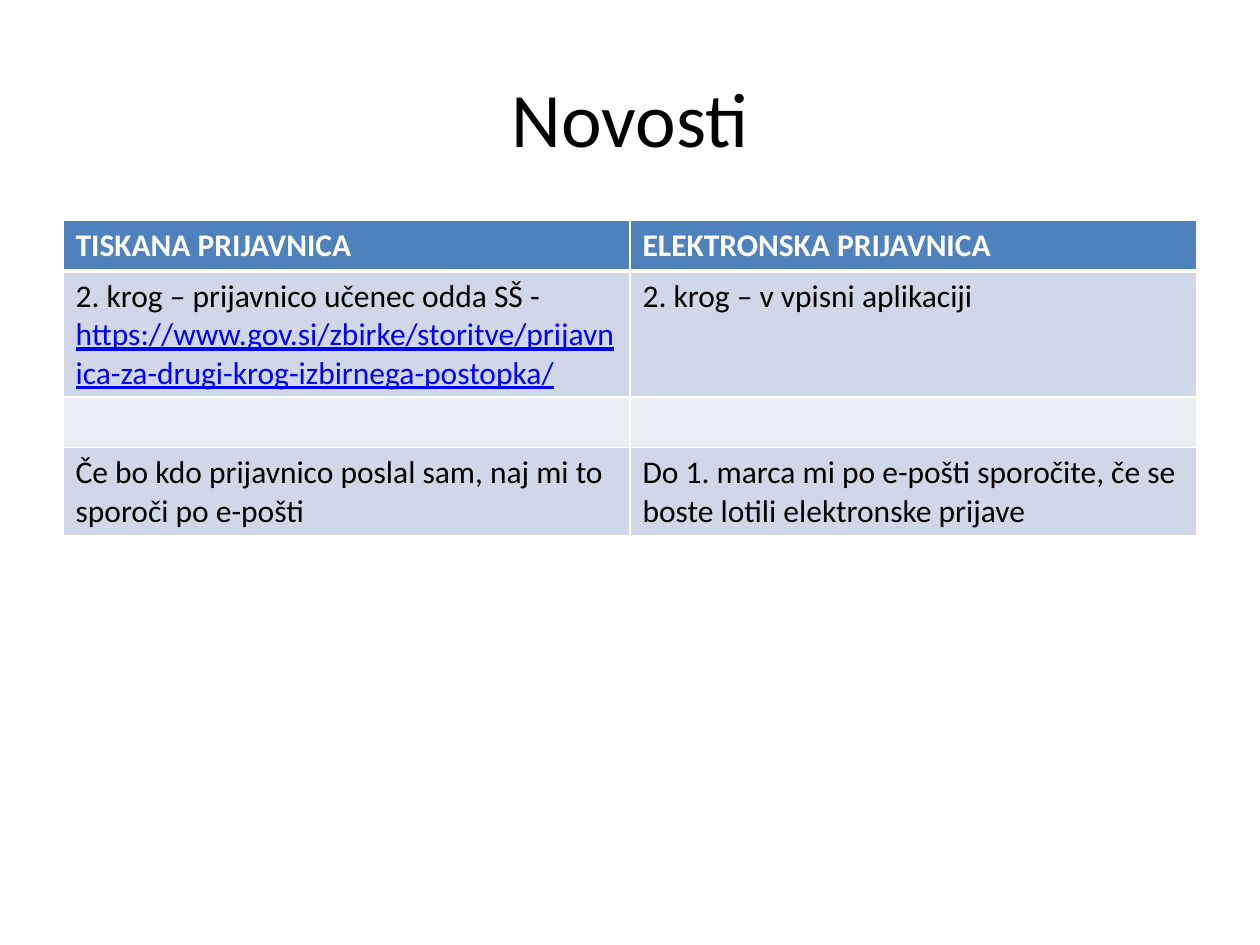
import dataclasses

import pptx
import pptx.dml.color
import pptx.enum.text
import pptx.oxml
import pptx.oxml.ns
import pptx.util


@dataclasses.dataclass(frozen=True)
class Theme:
    font: str = "Calibri"
    title_size: int = 44
    body_size: int = 18
    thin_border: int = 1
    thick_border: int = 3
    dark: str = "000000"
    light: str = "FFFFFF"
    link: str = "0000FF"
    header_fill: str = "4F81BD"
    band_fills: tuple[str, str] = ("D0D8E8", "E9EDF4")


@dataclasses.dataclass(frozen=True)
class Frame:
    left: float
    top: float
    width: float
    height: float

    def lengths(self) -> tuple[int, ...]:
        return (
            int(self.left * SLIDE_WIDTH),
            int(self.top * SLIDE_HEIGHT),
            int(self.width * SLIDE_WIDTH),
            int(self.height * SLIDE_HEIGHT),
        )


@dataclasses.dataclass(frozen=True)
class Entry:
    text: str = ""
    link: str = ""


@dataclasses.dataclass(frozen=True)
class Row:
    lines: int
    entries: tuple[Entry, Entry]


THEME = Theme()
SLIDE_WIDTH = pptx.util.Inches(10)
SLIDE_HEIGHT = pptx.util.Inches(7.5)
TITLE_FRAME = Frame(0.05, 0.04, 0.9, 1 / 6)
TABLE_FRAME = Frame(0.05, 0.7 / 3, 0.9, 1 / 3)
LINE_HEIGHT = pptx.util.Inches(0.3)
ROW_PADDING = pptx.util.Inches(0.1)

ROWS = (
    Row(1, (Entry("TISKANA PRIJAVNICA"), Entry("ELEKTRONSKA PRIJAVNICA"))),
    Row(3, (
        Entry(
            "2. krog – prijavnico učenec odda SŠ - ",
            "https://www.gov.si/zbirke/storitve/prijavnica-za-drugi-krog-izbirnega-postopka/",
        ),
        Entry("2. krog – v vpisni aplikaciji"),
    )),
    Row(1, (Entry(), Entry())),
    Row(2, (
        Entry("Če bo kdo prijavnico poslal sam, naj mi to sporoči po e-pošti"),
        Entry("Do 1. marca mi po e-pošti sporočite, če se boste lotili elektronske prijave"),
    )),
)


def format_font(font, size: int, color: str, bold: bool = False) -> None:
    font.name = THEME.font
    font.size = pptx.util.Pt(size)
    font.bold = bold
    font.color.rgb = pptx.dml.color.RGBColor.from_string(color)


def set_borders(cell, top: int, bottom: int) -> None:
    widths = {"L": THEME.thin_border, "R": THEME.thin_border, "T": top, "B": bottom}
    properties = cell._tc.get_or_add_tcPr()
    for position, (side, width) in enumerate(widths.items()):
        border = pptx.oxml.parse_xml(
            f'<a:ln{side} {pptx.oxml.ns.nsdecls("a")} w="{pptx.util.Pt(width)}">'
            f'<a:solidFill><a:srgbClr val="{THEME.light}"/></a:solidFill></a:ln{side}>'
        )
        properties.insert(position, border)


def draw_title(slide, text: str) -> None:
    text_frame = slide.shapes.add_textbox(*TITLE_FRAME.lengths()).text_frame
    text_frame.word_wrap = True
    text_frame.vertical_anchor = pptx.enum.text.MSO_ANCHOR.MIDDLE
    text_frame.text = text
    paragraph = text_frame.paragraphs[0]
    paragraph.alignment = pptx.enum.text.PP_ALIGN.CENTER
    format_font(paragraph.runs[0].font, THEME.title_size, THEME.dark)


def fill_cell(cell, entry: Entry, row_index: int) -> None:
    header = row_index == 0
    fill = THEME.header_fill if header else THEME.band_fills[(row_index - 1) % 2]
    cell.fill.solid()
    cell.fill.fore_color.rgb = pptx.dml.color.RGBColor.from_string(fill)
    set_borders(
        cell,
        THEME.thick_border if row_index == 1 else THEME.thin_border,
        THEME.thick_border if header else THEME.thin_border,
    )
    cell.text_frame.text = entry.text
    paragraph = cell.text_frame.paragraphs[0]
    color = THEME.light if header else THEME.dark
    for run in paragraph.runs:
        format_font(run.font, THEME.body_size, color, header)
    if entry.link:
        link_run = paragraph.add_run()
        link_run.text = entry.link
        format_font(link_run.font, THEME.body_size, THEME.link)
        link_run.font.underline = True


def draw_table(slide, rows: tuple[Row, ...]) -> None:
    table = slide.shapes.add_table(
        len(rows), len(rows[0].entries), *TABLE_FRAME.lengths()
    ).table
    for row_index, row in enumerate(rows):
        table.rows[row_index].height = row.lines * LINE_HEIGHT + ROW_PADDING
        for column_index, entry in enumerate(row.entries):
            fill_cell(table.cell(row_index, column_index), entry, row_index)


def main() -> None:
    presentation = pptx.Presentation()
    presentation.slide_width = SLIDE_WIDTH
    presentation.slide_height = SLIDE_HEIGHT
    slide = presentation.slides.add_slide(presentation.slide_layouts[6])
    draw_title(slide, "Novosti")
    draw_table(slide, ROWS)
    presentation.save("out.pptx")


if __name__ == "__main__":
    main()
